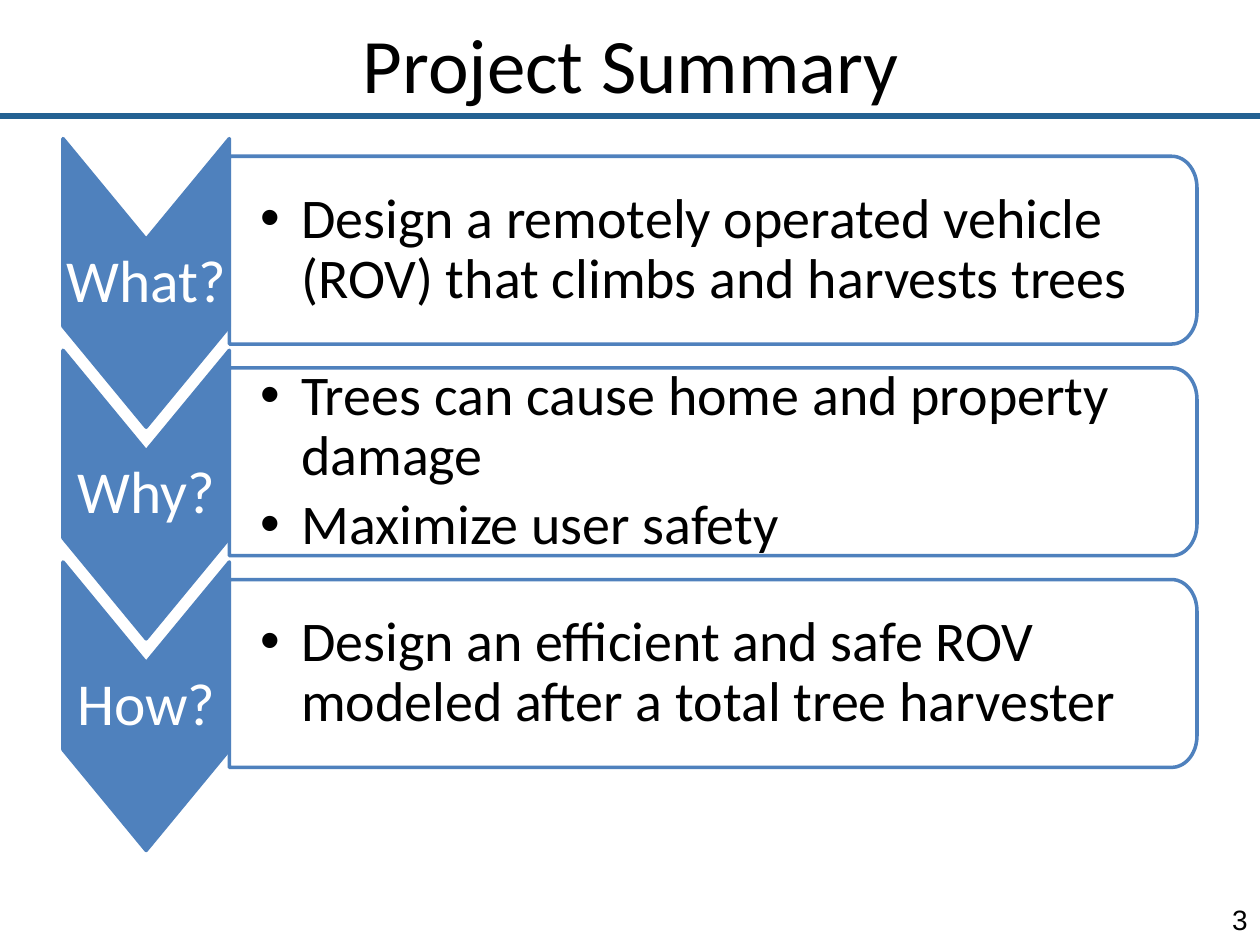
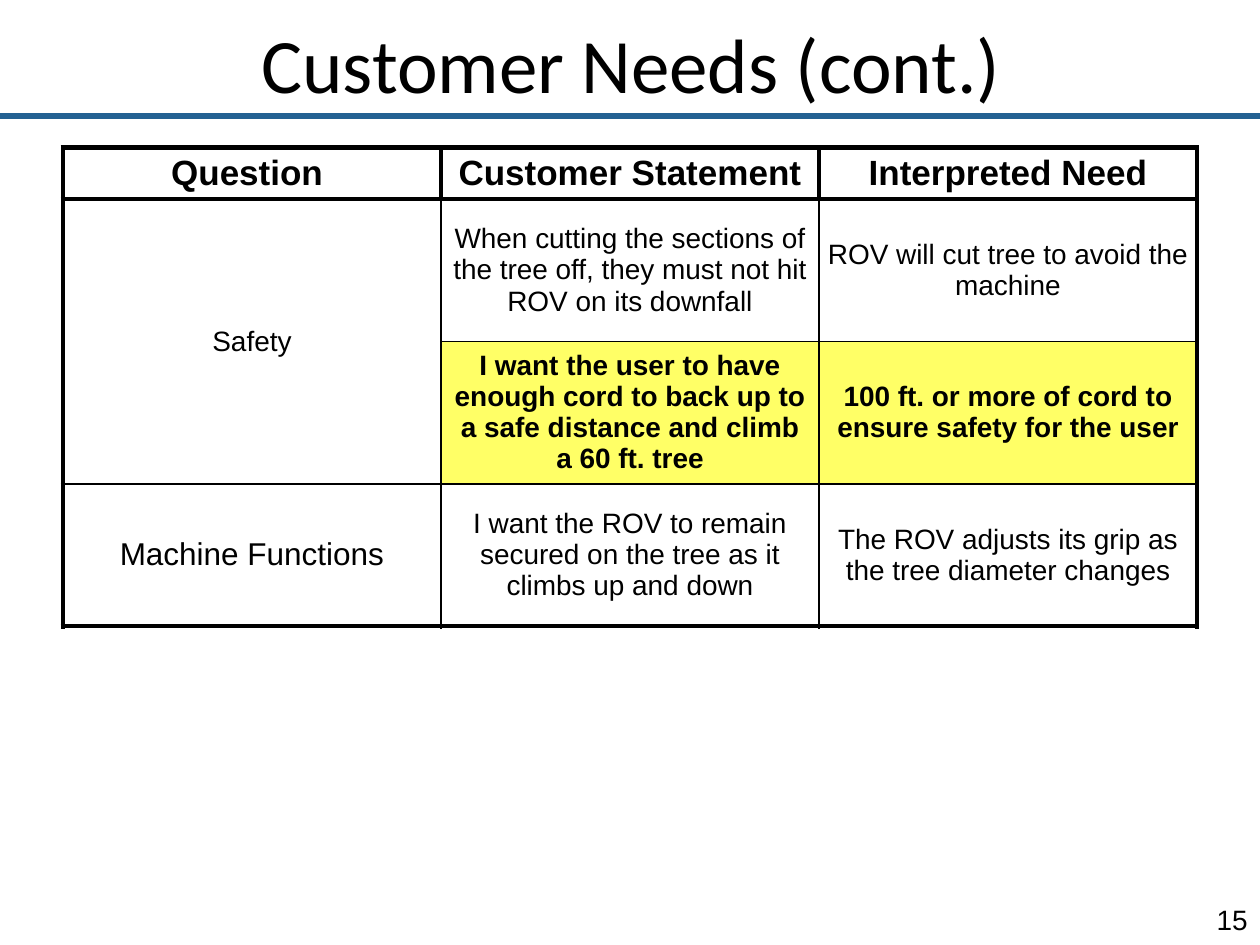
import dataclasses
import math

import lxml.etree
import pptx
import pptx.dml.color
import pptx.enum.shapes
import pptx.enum.text
import pptx.oxml.ns
import pptx.util

Inches = pptx.util.Inches
Pt = pptx.util.Pt
RGB = pptx.dml.color.RGBColor.from_string
ALIGN = pptx.enum.text.PP_ALIGN
ANCHOR = pptx.enum.text.MSO_ANCHOR
qn = pptx.oxml.ns.qn


@dataclasses.dataclass(frozen=True)
class Theme:
    ink: str = "000000"
    white: str = "FFFFFF"
    rule: str = "236192"
    blue: str = "4F81BD"
    mark: str = "FFFF66"
    head: str = "Calibri"
    body: str = "Arial"
    title: int = 44
    step: int = 34
    point: int = 32
    label: int = 20
    group: int = 18
    small: int = 16


THEME = Theme()

STEPS = [
    ("What?", ["Design a remotely operated vehicle (ROV) that climbs and harvests trees"]),
    ("Why?", ["Trees can cause home and property damage", "Maximize user safety"]),
    ("How?", ["Design an efficient and safe ROV modeled after a total tree harvester"]),
]

NEEDS = [
    ["Question ", "Customer Statement", "Interpreted Need"],
    ["Safety",
     "When cutting the sections of the tree off, they must not hit ROV on its downfall",
     "ROV will cut tree to avoid the machine"],
    ["",
     "I want the user to have enough cord to back up to a safe distance and climb a 60 ft. tree",
     "100 ft. or more of cord to ensure safety for the user"],
    ["Machine Functions",
     "I want the ROV to remain secured on the tree as it climbs up and down",
     "The ROV adjusts its grip as the tree diameter changes"],
    ["", "", ""],
]
HEADER, MARKED, LAST, TAIL = 0, 2, 3, 4


def write(para, text, size, font, color=THEME.ink, bold=False, align=ALIGN.CENTER):
    para.alignment = align
    run = para.add_run()
    run.text = text
    run.font.size = Pt(size)
    run.font.name = font
    run.font.bold = bold
    run.font.color.rgb = RGB(color)


def inset(frame, left, top, right, bottom):
    frame.margin_left, frame.margin_top = Inches(left), Inches(top)
    frame.margin_right, frame.margin_bottom = Inches(right), Inches(bottom)


def add_base(deck, title, number):
    slide = deck.slides.add_slide(deck.slide_layouts[5])
    rule = slide.shapes.add_connector(
        pptx.enum.shapes.MSO_CONNECTOR.STRAIGHT,
        0, Inches(0.92), deck.slide_width, Inches(0.92))
    rule.line.color.rgb = RGB(THEME.rule)
    rule.line.width = Pt(3.5)
    props = rule._element.find(qn("p:spPr"))
    lxml.etree.SubElement(props, qn("a:effectLst"))

    box = slide.shapes.add_textbox(Inches(9.5), Inches(7.1), Inches(0.5), Inches(0.4))
    box.text_frame.word_wrap = True
    box.text_frame.vertical_anchor = ANCHOR.MIDDLE
    write(box.text_frame.paragraphs[0], str(number), THEME.small, THEME.body,
          align=ALIGN.RIGHT)

    head = slide.shapes.title
    head.left, head.top = Inches(0.51), Inches(0.08)
    head.width, head.height = Inches(9), Inches(0.67)
    frame = head.text_frame
    frame.auto_size = pptx.enum.text.MSO_AUTO_SIZE.NONE
    frame.vertical_anchor = ANCHOR.TOP
    inset(frame, 0.1, 0.05, 0.1, 0)
    write(frame.paragraphs[0], title, THEME.title, THEME.head)
    return slide


def add_outline(slide, points, fill):
    spots = [(Inches(x), Inches(y)) for x, y in points]
    pen = slide.shapes.build_freeform(*spots[0])
    pen.add_line_segments(spots[1:], close=True)
    shape = pen.convert_to_shape()
    shape.shadow.inherit = False
    shape.fill.solid()
    shape.fill.fore_color.rgb = RGB(fill)
    shape.line.color.rgb = RGB(THEME.blue)
    shape.line.width = Pt(2)
    shape.text_frame.word_wrap = True
    shape.text_frame.vertical_anchor = ANCHOR.MIDDLE
    return shape


def add_arrow(slide, left, top, width, height, text):
    dip = 0.8
    mid, right, low = left + width / 2, left + width, top + height
    points = [(right, top), (right, low - dip), (mid, low),
              (left, low - dip), (left, top), (mid, top + dip)]
    frame = add_outline(slide, points, THEME.blue).text_frame
    inset(frame, 0.02, 0.68, 0.02, 0.68)
    para = frame.paragraphs[0]
    para.line_spacing = 0.9
    write(para, text, THEME.step, THEME.head, THEME.white)


def add_bullet(para):
    props = para._p.get_or_add_pPr()
    props.set("marL", str(Inches(0.32)))
    props.set("indent", str(-Inches(0.32)))
    lxml.etree.SubElement(props, qn("a:buFont"), typeface=THEME.body)
    lxml.etree.SubElement(props, qn("a:buChar"), char="•")


def add_panel(slide, left, top, width, height, items):
    wide, tall = 0.2, 0.25
    right, low = left + width, top + height
    turns = [math.radians(angle) for angle in range(0, 91, 6)]
    upper = [(right - wide + wide * math.sin(t), top + tall - tall * math.cos(t))
             for t in turns]
    lower = [(right - wide + wide * math.cos(t), low - tall + tall * math.sin(t))
             for t in turns]
    shape = add_outline(slide, [(left, top), *upper, *lower, (left, low)], THEME.white)
    color = shape._element.spPr.find(qn("a:solidFill"))[0]
    lxml.etree.SubElement(color, qn("a:alpha"), val="90000")
    frame = shape.text_frame
    inset(frame, 0.25, 0.08, 0.08, 0.08)
    for index, item in enumerate(items):
        para = frame.add_paragraph() if index else frame.paragraphs[0]
        add_bullet(para)
        para.line_spacing = 0.9
        if index:
            para.space_before = Pt(5)
        write(para, item, THEME.point, THEME.head, align=ALIGN.LEFT)


def add_steps(slide, left, top, width, steps):
    arrow, pitch = 1.32, 1.68
    for index, (name, items) in enumerate(steps):
        y = top + index * pitch
        add_arrow(slide, left, y, arrow, 2.29, name)
        add_panel(slide, left + arrow, y + 0.14, width - arrow, 1.49, items)


def add_edges(cell, row, col, last_col):
    header, tail = row == HEADER, row == TAIL
    thick = {
        "L": header or col == 0,
        "R": header or col == last_col,
        "T": row <= HEADER + 1 or tail,
        "B": header or row == LAST,
    }
    props = cell._tc.get_or_add_tcPr()
    for side, heavy in thick.items():
        edge = lxml.etree.SubElement(props, qn("a:ln" + side), w=str(Pt(3 if heavy else 1)))
        if tail and side != "T":
            lxml.etree.SubElement(edge, qn("a:noFill"))
            continue
        fill = lxml.etree.SubElement(edge, qn("a:solidFill"))
        lxml.etree.SubElement(fill, qn("a:srgbClr"), val=THEME.ink)


def add_needs(slide, left, top, width, needs):
    heights = [0.41, 1.13, 1.13, 1.13, 0.41]
    count = len(needs[0])
    table = slide.shapes.add_table(
        len(needs), count, Inches(left), Inches(top),
        Inches(width), Inches(sum(heights))).table
    table.first_row = table.horz_banding = False
    for row, height in zip(table.rows, heights):
        row.height = Inches(height)
    for r, texts in enumerate(needs):
        for c, text in enumerate(texts):
            cell = table.cell(r, c)
            add_edges(cell, r, c, count - 1)
            cell.fill.background()
            cell.vertical_anchor = ANCHOR.MIDDLE
            if r == HEADER:
                inset(cell, 0.1, 0.03, 0.1, 0.03)
            elif c:
                pad = 0.03 if r == MARKED else 0.07
                inset(cell, 0.07, pad, 0.07, pad)
            if r == MARKED and c:
                cell.fill.solid()
                cell.fill.fore_color.rgb = RGB(THEME.mark)
            size = THEME.label if r == HEADER else THEME.small
            if r == LAST and c == 0:
                size = THEME.group
            if text:
                write(cell.text_frame.paragraphs[0], text, size, THEME.body,
                      bold=r in (HEADER, MARKED))
    table.cell(1, 0).merge(table.cell(2, 0))


def main():
    deck = pptx.Presentation()
    deck.slide_width, deck.slide_height = Inches(10), Inches(7.5)
    add_steps(add_base(deck, "Project Summary", 3), 0.5, 1.1, 9, STEPS)
    add_needs(add_base(deck, "Customer Needs (cont.)", 15), 0.5, 1.17, 9, NEEDS)
    deck.save("out.pptx")


if __name__ == "__main__":
    main()
